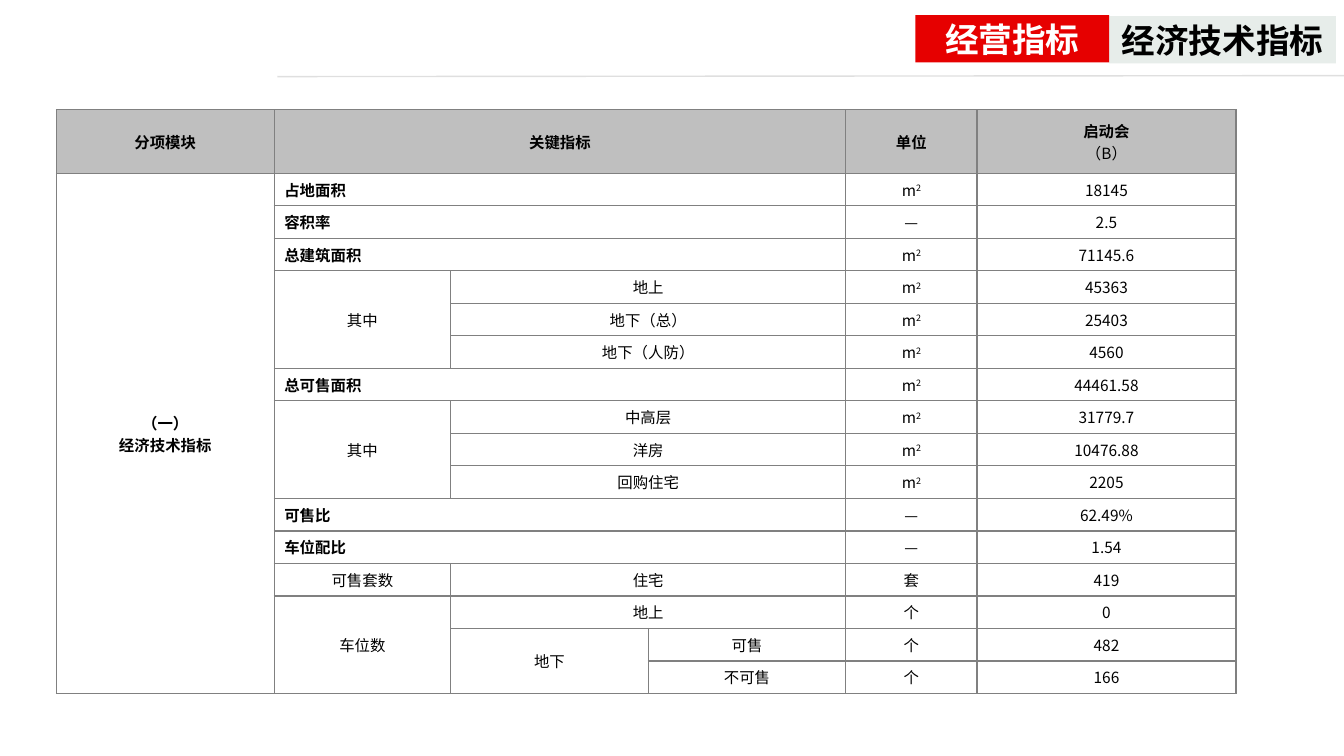
import pptx
import pptx.dml.color
import pptx.enum.shapes
import pptx.enum.text
import pptx.oxml
import pptx.oxml.ns
import pptx.util
from pptx.util import Inches

FONT = "Noto Sans CJK SC"
COLORS = {
    "black": "000000",
    "white": "FFFFFF",
    "red": "E60000",
    "pale": "E7EDEA",
    "header": "BFBFBF",
    "border": "808080",
    "rule": "C0C0C0",
}
COLUMN_WIDTHS = [2.16, 1.75, 1.96, 1.96, 1.3, 2.57]
HEADER_HEIGHT = 0.63
SQUARE_METRE = "m^2"

# Text, row, column, rows spanned, columns spanned
HEADERS = [
    ("分项模块", 0, 0, 1, 1),
    ("关键指标", 0, 1, 1, 3),
    ("单位", 0, 4, 1, 1),
]
MODULE = ("（一）\n经济技术指标", 1, 0, 16, 1)
MAIN_INDICATORS = {1: "占地面积", 2: "容积率", 3: "总建筑面积", 7: "总可售面积", 11: "可售比", 12: "车位配比"}
SUB_INDICATORS = [
    ("其中", 4, 1, 3, 1),
    ("地上", 4, 2, 1, 2),
    ("地下（总）", 5, 2, 1, 2),
    ("地下（人防）", 6, 2, 1, 2),
    ("其中", 8, 1, 3, 1),
    ("中高层", 8, 2, 1, 2),
    ("洋房", 9, 2, 1, 2),
    ("回购住宅", 10, 2, 1, 2),
    ("可售套数", 13, 1, 1, 1),
    ("住宅", 13, 2, 1, 2),
    ("车位数", 14, 1, 3, 1),
    ("地上", 14, 2, 1, 2),
    ("地下", 15, 2, 2, 1),
    ("可售", 15, 3, 1, 1),
    ("不可售", 16, 3, 1, 1),
]
MEASURES = [
    (SQUARE_METRE, "18145"),
    ("—", "2.5"),
    (SQUARE_METRE, "71145.6"),
    (SQUARE_METRE, "45363"),
    (SQUARE_METRE, "25403"),
    (SQUARE_METRE, "4560"),
    (SQUARE_METRE, "44461.58"),
    (SQUARE_METRE, "31779.7"),
    (SQUARE_METRE, "10476.88"),
    (SQUARE_METRE, "2205"),
    ("—", "62.49%"),
    ("—", "1.54"),
    ("套", "419"),
    ("个", "0"),
    ("个", "482"),
    ("个", "166"),
]


def rgb(name):
    return pptx.dml.color.RGBColor.from_string(COLORS[name])


def add_xml(parent, xml):
    """Append a fragment written with the a: prefix and return it."""
    head, mark, rest = xml.partition(">")
    slash = "/" if head.endswith("/") else ""
    head = head.rstrip("/")
    element = pptx.oxml.parse_xml(f"{head} {pptx.oxml.ns.nsdecls('a')}{slash}{mark}{rest}")
    parent.append(element)
    return element


def write_text(frame, text, size=11, color="black", bold=False, align="CENTER", plain_lines=()):
    """Fill a frame; ^ raises the rest of a line, plain_lines are never bold."""
    frame.word_wrap = True
    for index, line in enumerate(text.split("\n")):
        paragraph = frame.paragraphs[0] if index == 0 else frame.add_paragraph()
        paragraph.alignment = getattr(pptx.enum.text.PP_ALIGN, align)
        base, _, raised = line.partition("^")
        for part in filter(None, (base, raised)):
            run = paragraph.add_run()
            run.text = part
            run.font.size = pptx.util.Pt(size)
            run.font.bold = bold and index not in plain_lines
            run.font.name = FONT
            run.font.color.rgb = rgb(color)
            properties = run.font._element
            add_xml(properties, f'<a:ea typeface="{FONT}"/>')
            if part == raised:
                properties.set("baseline", "30000")


def add_heading_box(slide, text, left, top, width, height, fill, color):
    shape = slide.shapes.add_shape(
        pptx.enum.shapes.MSO_SHAPE.RECTANGLE, Inches(left), Inches(top), Inches(width), Inches(height))
    shape.shadow.inherit = False
    shape.fill.solid()
    shape.fill.fore_color.rgb = rgb(fill)
    shape.line.fill.background()
    frame = shape.text_frame
    frame.margin_left = frame.margin_right = frame.margin_top = frame.margin_bottom = 0
    frame.vertical_anchor = pptx.enum.text.MSO_ANCHOR.MIDDLE
    write_text(frame, text, size=24, color=color, bold=True)


def add_heading(slide, left, top, height):
    """Two title boxes side by side above a thin translucent rule."""
    rule = slide.shapes.add_connector(
        pptx.enum.shapes.MSO_CONNECTOR.STRAIGHT, Inches(2.75), Inches(0.76), Inches(13.33), Inches(0.75))
    rule.line.color.rgb = rgb("rule")
    rule.line.width = pptx.util.Pt(1)
    color = rule.line._ln.find(".//" + pptx.oxml.ns.qn("a:srgbClr"))
    add_xml(color, '<a:alpha val="50000"/>')
    add_xml(rule._element.spPr, "<a:effectLst/>")
    section_width = 1.92
    add_heading_box(slide, "经济技术指标", left + section_width, top + 0.01, 2.25, height, "pale", "black")
    add_heading_box(slide, "经营指标", left, top, section_width, height, "red", "white")


def style_cell(cell, is_header):
    cell.vertical_anchor = pptx.enum.text.MSO_ANCHOR.MIDDLE
    cell.margin_top = cell.margin_bottom = Inches(0.03)
    properties = cell._tc.get_or_add_tcPr()
    for side in "LRTB":
        add_xml(properties, f'<a:ln{side} w="12700"><a:solidFill><a:srgbClr val="{COLORS["border"]}"/>'
                            f'</a:solidFill></a:ln{side}>')
    if is_header:
        cell.fill.solid()
        cell.fill.fore_color.rgb = rgb("header")
    else:
        cell.fill.background()


def fill_cell(table, entry, **text_format):
    text, row, column, row_span, column_span = entry
    cell = table.cell(row, column)
    if row_span * column_span > 1:
        cell.merge(table.cell(row + row_span - 1, column + column_span - 1))
    write_text(cell.text_frame, text, **text_format)


def add_indicator_table(slide, left, top, width, height):
    row_count = len(MEASURES) + 1
    table = slide.shapes.add_table(
        row_count, len(COLUMN_WIDTHS), Inches(left), Inches(top), Inches(width), Inches(height)).table
    table.first_row = table.horz_banding = False
    for column, column_width in zip(table.columns, COLUMN_WIDTHS):
        column.width = Inches(column_width)
    for index, row in enumerate(table.rows):
        row.height = Inches((height - HEADER_HEIGHT) / len(MEASURES) if index else HEADER_HEIGHT)
        for cell in row.cells:
            style_cell(cell, index == 0)

    for entry in HEADERS + [MODULE]:
        fill_cell(table, entry, bold=True)
    fill_cell(table, ("启动会\n（B）", 0, 5, 1, 1), bold=True, plain_lines=(1,))
    for row, label in MAIN_INDICATORS.items():
        fill_cell(table, (label, row, 1, 1, 3), bold=True, align="LEFT")
    for entry in SUB_INDICATORS:
        fill_cell(table, entry)
    for row, measure in enumerate(MEASURES, start=1):
        for column, text in enumerate(measure, start=4):
            fill_cell(table, (text, row, column, 1, 1))


def main():
    presentation = pptx.Presentation()
    presentation.slide_width = Inches(13.33)
    presentation.slide_height = Inches(7.5)
    slide = presentation.slides.add_slide(presentation.slide_layouts[6])
    add_heading(slide, 9.08, 0.15, 0.47)
    add_indicator_table(slide, 0.56, 1.09, sum(COLUMN_WIDTHS), 5.79)
    presentation.save("out.pptx")


if __name__ == "__main__":
    main()
